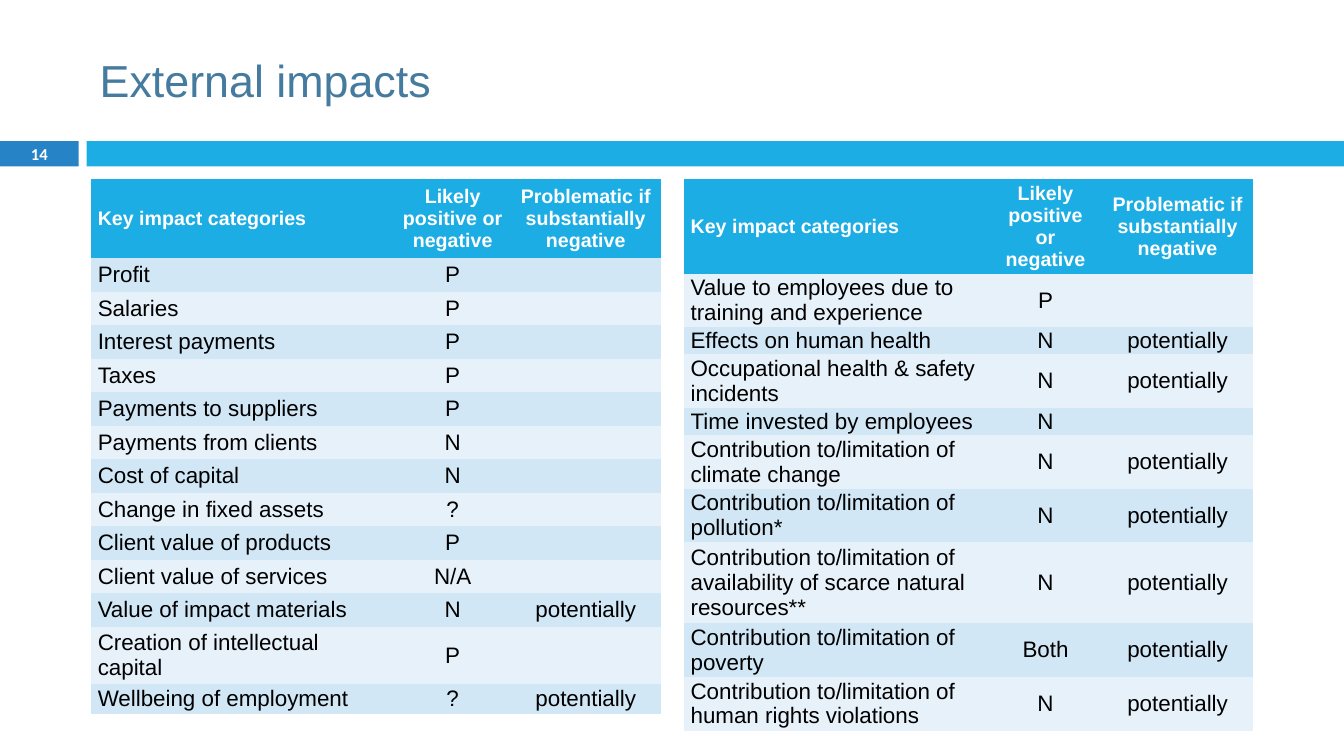
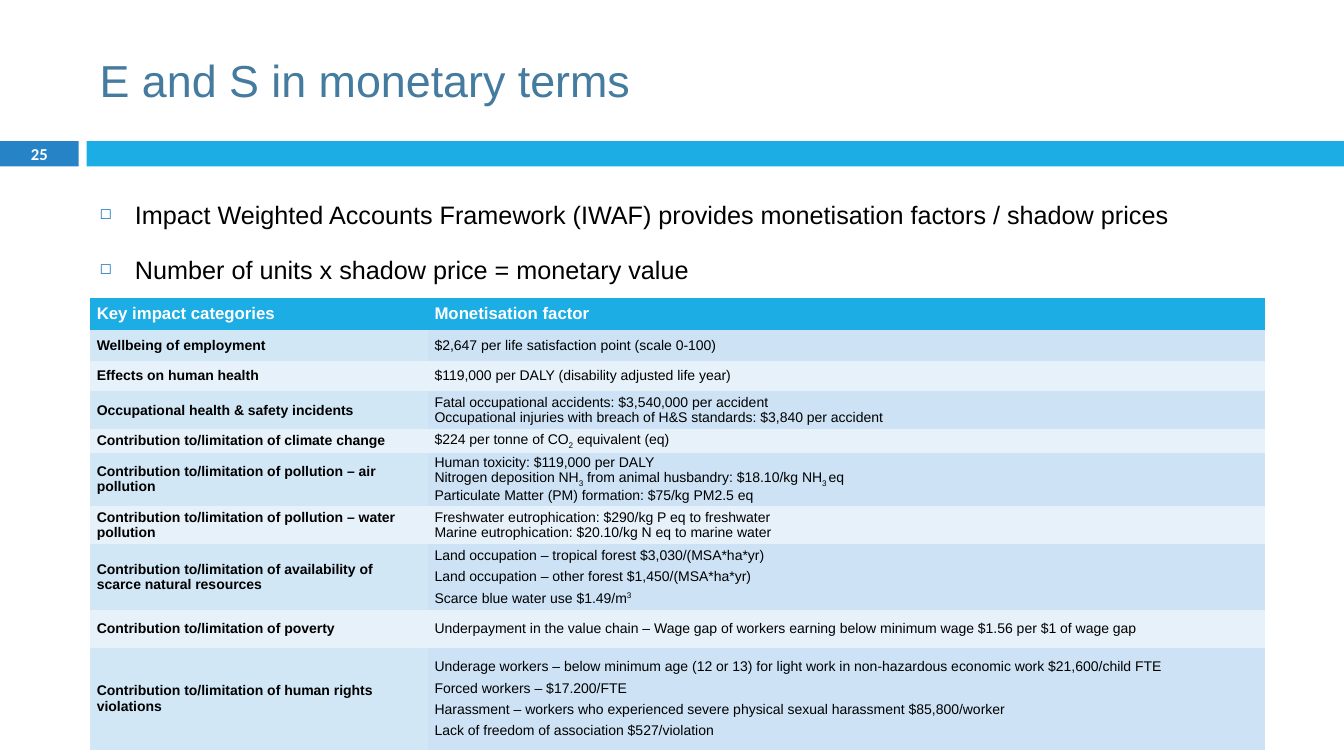
from dataclasses import dataclass
from typing import Any, NamedTuple

from lxml.etree import SubElement
from pptx import Presentation
from pptx.dml.color import RGBColor
from pptx.enum.shapes import MSO_SHAPE
from pptx.enum.text import MSO_ANCHOR, PP_ALIGN
from pptx.oxml.ns import qn
from pptx.util import Inches, Pt

COLORS = {
    "title": "457B9E",
    "number_band": "2683C6",
    "accent": "1CADE4",
    "dark_row": "D1E7F6",
    "dark_factor": "CDE3F5",
    "light_row": "E7F1FA",
    "white": "FFFFFF",
    "black": "000000",
}


def text_format(size: float, color: str, bold: bool = False, name: str = "Arial") -> dict[str, Any]:
    return {"size": Pt(size), "bold": bold, "name": name, "color": color}


FORMATS = {
    "title": text_format(32, "title"),
    "number": text_format(11.9, "white", True, "Calibri"),
    "bullet": text_format(18, "black"),
    "impact_header": text_format(14, "white", True),
    "impact": text_format(16, "black"),
    "factor_header": text_format(12, "white", True),
    "factor_label": text_format(10, "black", True),
    "factor": text_format(10, "black"),
}
PLAIN_TABLE_STYLE = "{2D5ABB26-0587-4C30-8999-92F81FD0307C}"
SUBSCRIPT = -25000
SUPERSCRIPT = 30000


class Run(NamedTuple):
    text: str
    baseline: int = 0


class Box(NamedTuple):
    left: float
    top: float
    width: float
    height: float


class Column(NamedTuple):
    width: float
    format_name: str
    dark_fill: str = "dark_row"
    alignment: PP_ALIGN = PP_ALIGN.LEFT


@dataclass
class TableSpec:
    left: float
    top: float
    columns: list[Column]
    header_format: str
    header_height: float
    header: list[str]
    heights: list[float]
    rows: list[tuple]
    dark_first: bool = True
    paragraph_gap: float = 0


TITLE_BOX = Box(0.89, 0.25, 11.89, 1.08)
NUMBER_BAND = Box(0, 1.4, 0.78, 0.25)
MAIN_BAND = Box(0.86, 1.4, 12.47, 0.25)
BULLET_BOX = Box(0.89, 1.78, 11.99, 5.28)

IMPACT_HEADER = [
    "Key impact categories",
    "Likely positive or negative",
    "Problematic if substantially negative",
]


def impact_columns(category_width: float, sign_width: float) -> list[Column]:
    return [
        Column(category_width, "impact"),
        Column(sign_width, "impact", alignment=PP_ALIGN.CENTER),
        Column(1.5, "impact", alignment=PP_ALIGN.CENTER),
    ]


IMPACT_TABLES = [
    TableSpec(
        0.9, 1.78, impact_columns(3.02, 1.14), "impact_header", 0.78, IMPACT_HEADER,
        [0.333] * 11 + [0.57, 0.29],
        [
            ("Profit", "P", ""),
            ("Salaries", "P", ""),
            ("Interest payments", "P", ""),
            ("Taxes", "P", ""),
            ("Payments to suppliers", "P", ""),
            ("Payments from clients", "N", ""),
            ("Cost of capital", "N", ""),
            ("Change in fixed assets", "?", ""),
            ("Client value of products", "P", ""),
            ("Client value of services", "N/A", ""),
            ("Value of impact materials", "N", "potentially"),
            ("Creation of intellectual capital", "P", ""),
            ("Wellbeing of employment", "?", "potentially"),
        ],
    ),
    TableSpec(
        6.78, 1.78, impact_columns(3.03, 1.12), "impact_header", 0.78, IMPACT_HEADER,
        [0.53, 0.26, 0.53, 0.26, 0.53, 0.53, 0.79, 0.53, 0.53],
        [
            ("Value to employees due to training and experience", "P", ""),
            ("Effects on human health", "N", "potentially"),
            ("Occupational health & safety incidents", "N", "potentially"),
            ("Time invested by employees", "N", ""),
            ("Contribution to/limitation of climate change", "N", "potentially"),
            ("Contribution to/limitation of pollution*", "N", "potentially"),
            ("Contribution to/limitation of availability of scarce natural resources**",
             "N", "potentially"),
            ("Contribution to/limitation of poverty", "Both", "potentially"),
            ("Contribution to/limitation of human rights violations", "N", "potentially"),
        ],
        dark_first=False,
    ),
]

FACTOR_TABLE = TableSpec(
    0.89, 2.96,
    [Column(3.35, "factor_label"), Column(8.31, "factor", "dark_factor")],
    "factor_header", 0.31, ["Key impact categories", "Monetisation factor"],
    [0.31, 0.3, 0.38, 0.23, 0.53, 0.38, 0.65, 0.38, 1.01],
    [
        ("Wellbeing of employment", "$2,647 per life satisfaction point (scale 0-100)"),
        ("Effects on human health", "$119,000 per DALY (disability adjusted life year)"),
        ("Occupational health & safety incidents",
         "Fatal occupational accidents: $3,540,000 per accident\n"
         "Occupational injuries with breach of H&S standards: $3,840 per accident"),
        ("Contribution to/limitation of climate change",
         [[Run("$224 per tonne of CO"), Run("2", SUBSCRIPT), Run(" equivalent (eq)")]]),
        ("Contribution to/limitation of pollution – air pollution",
         [[Run("Human toxicity: $119,000 per DALY\nNitrogen deposition NH"),
           Run("3", SUBSCRIPT),
           Run(" from animal husbandry: $18.10/kg NH"),
           Run("3 ", SUBSCRIPT),
           Run("eq\nParticulate Matter (PM) formation: $75/kg PM2.5 eq")]]),
        ("Contribution to/limitation of pollution – water pollution",
         "Freshwater eutrophication: $290/kg P eq to freshwater\n"
         "Marine eutrophication: $20.10/kg N eq to marine water"),
        ("Contribution to/limitation of availability of scarce natural resources",
         ["Land occupation – tropical forest $3,030/(MSA*ha*yr)",
          "Land occupation – other forest $1,450/(MSA*ha*yr)",
          [Run("Scarce blue water use $1.49/m"), Run("3", SUPERSCRIPT)]]),
        ("Contribution to/limitation of poverty",
         "Underpayment in the value chain – Wage gap of workers earning below "
         "minimum wage $1.56 per $1 of wage gap"),
        ("Contribution to/limitation of human rights violations",
         ["Underage workers – below minimum age (12 or 13) for light work "
          "in non-hazardous economic work $21,600/child FTE",
          "Forced workers – $17.200/FTE",
          "Harassment – workers who experienced severe physical sexual harassment $85,800/worker",
          "Lack of freedom of association $527/violation"]),
    ],
    paragraph_gap=2,
)

BULLETS = [
    "Impact Weighted Accounts Framework (IWAF) provides monetisation factors / shadow prices",
    "Number of units x shadow price = monetary value",
]


def rgb(name: str) -> RGBColor:
    return RGBColor.from_string(COLORS[name])


def inches(box: Box) -> list[Inches]:
    return [Inches(length) for length in box]


def apply_format(font, format_name: str) -> None:
    for attribute, value in FORMATS[format_name].items():
        if attribute == "color":
            font.color.rgb = rgb(value)
        else:
            setattr(font, attribute, value)


def write_paragraph(paragraph, content: str | list[Run], format_name: str) -> None:
    if not content:
        size = FORMATS[format_name]["size"]
        SubElement(paragraph._p, qn("a:endParaRPr"), sz=str(int(size.pt * 100)))
        return
    for part in [Run(content)] if isinstance(content, str) else content:
        for index, line in enumerate(part.text.split("\n")):
            if index:
                paragraph.add_line_break()
            run = paragraph.add_run()
            run.text = line
            apply_format(run.font, format_name)
            if part.baseline:
                run.font._element.set("baseline", str(part.baseline))


def write_text(frame, content: str | list, format_name: str,
               alignment: PP_ALIGN = PP_ALIGN.LEFT, gap: float = 0) -> None:
    for index, text in enumerate([content] if isinstance(content, str) else content):
        paragraph = frame.add_paragraph() if index else frame.paragraphs[0]
        paragraph.alignment = alignment
        paragraph.space_before = paragraph.space_after = Pt(gap)
        write_paragraph(paragraph, text, format_name)


def add_band(slide, box: Box, color: str):
    shape = slide.shapes.add_shape(MSO_SHAPE.RECTANGLE, *inches(box))
    shape.shadow.inherit = False
    shape.fill.solid()
    shape.fill.fore_color.rgb = rgb(color)
    shape.line.fill.background()
    return shape


def add_text_box(slide, box: Box, anchor: MSO_ANCHOR):
    frame = slide.shapes.add_textbox(*inches(box)).text_frame
    frame.word_wrap = True
    frame.vertical_anchor = anchor
    return frame


def add_framed_slide(presentation, title: str, number: int):
    slide = presentation.slides.add_slide(presentation.slide_layouts[6])
    number_frame = add_band(slide, NUMBER_BAND, "number_band").text_frame
    number_frame.vertical_anchor = MSO_ANCHOR.MIDDLE
    number_frame.margin_top = number_frame.margin_bottom = 0
    write_text(number_frame, str(number), "number", PP_ALIGN.CENTER)
    add_band(slide, MAIN_BAND, "accent")
    write_text(add_text_box(slide, TITLE_BOX, MSO_ANCHOR.MIDDLE), title, "title")
    return slide


def fill_cell(cell, content: str | list, color: str, format_name: str,
              alignment: PP_ALIGN, gap: float) -> None:
    cell.fill.solid()
    cell.fill.fore_color.rgb = rgb(color)
    cell.vertical_anchor = MSO_ANCHOR.MIDDLE
    cell.margin_left = cell.margin_right = Inches(0.07)
    cell.margin_top = cell.margin_bottom = 0
    write_text(cell.text_frame, content, format_name, alignment, gap)


def add_table(slide, spec: TableSpec) -> None:
    heights = [spec.header_height, *spec.heights]
    box = Box(spec.left, spec.top, sum(column.width for column in spec.columns), sum(heights))
    table = slide.shapes.add_table(len(heights), len(spec.columns), *inches(box)).table
    table.first_row = table.horz_banding = False
    table._tbl.tblPr.find(qn("a:tableStyleId")).text = PLAIN_TABLE_STYLE
    for row, height in zip(table.rows, heights):
        row.height = Inches(height)
    for column_index, column in enumerate(spec.columns):
        table.columns[column_index].width = Inches(column.width)
        fill_cell(table.cell(0, column_index), spec.header[column_index], "accent",
                  spec.header_format, column.alignment, spec.paragraph_gap)
        for row_index, row in enumerate(spec.rows):
            is_dark = (row_index % 2 == 0) == spec.dark_first
            color = column.dark_fill if is_dark else "light_row"
            fill_cell(table.cell(row_index + 1, column_index), row[column_index], color,
                      column.format_name, column.alignment, spec.paragraph_gap)


def add_bullets(slide) -> None:
    frame = add_text_box(slide, BULLET_BOX, MSO_ANCHOR.TOP)
    write_text(frame, BULLETS, "bullet", gap=0)
    for paragraph in frame.paragraphs:
        paragraph.line_spacing = 1.5
        paragraph.space_before = Pt(7)
        properties = paragraph._p.get_or_add_pPr()
        properties.set("marL", str(Inches(0.35)))
        properties.set("indent", str(-Inches(0.35)))
        bullet_color = SubElement(properties, qn("a:buClr"))
        SubElement(bullet_color, qn("a:srgbClr"), val=COLORS["number_band"])
        SubElement(properties, qn("a:buSzPct"), val="60000")
        SubElement(properties, qn("a:buChar"), char="◻")


def main() -> None:
    presentation = Presentation()
    presentation.slide_width = Inches(13.33)
    presentation.slide_height = Inches(7.5)
    impacts_slide = add_framed_slide(presentation, "External impacts", 14)
    for spec in IMPACT_TABLES:
        add_table(impacts_slide, spec)
    monetary_slide = add_framed_slide(presentation, "E and S in monetary terms", 25)
    add_table(monetary_slide, FACTOR_TABLE)
    add_bullets(monetary_slide)
    presentation.save("out.pptx")


if __name__ == "__main__":
    main()
